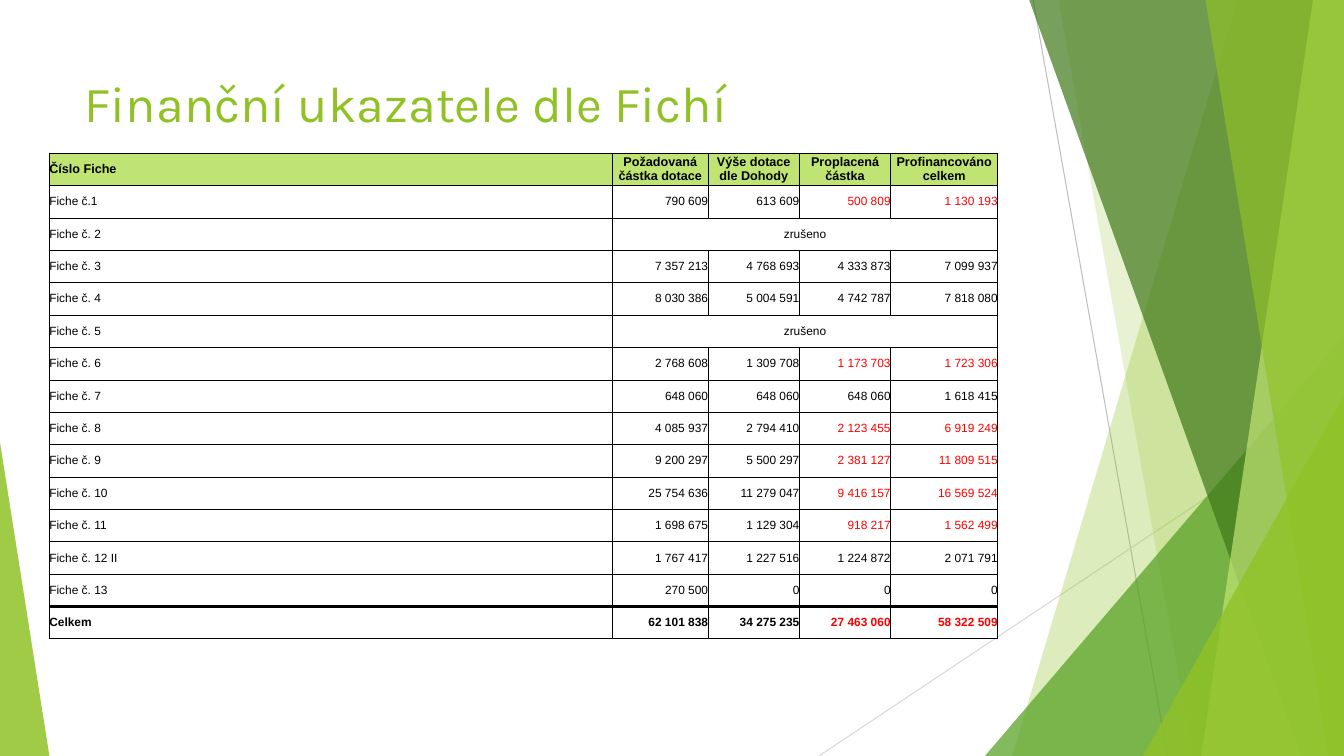
from dataclasses import dataclass

from lxml import etree
from pptx import Presentation
from pptx.dml.color import RGBColor
from pptx.enum import shapes, text
from pptx.oxml import ns
from pptx.util import Pt

W, H = 960, 540
LEFT, CENTER, RIGHT = text.PP_ALIGN.LEFT, text.PP_ALIGN.CENTER, text.PP_ALIGN.RIGHT


@dataclass(frozen=True)
class Theme:
    green: str = "90C226"
    leaf: str = "54A021"
    forest: str = "3F7819"
    lime: str = "C0E474"
    gray: str = "BFBFBF"
    pale_gray: str = "D9D9D9"
    black: str = "000000"
    red: str = "FF0000"
    white: str = "FFFFFF"
    title_font: str = "Karla"
    table_font: str = "Arial"
    title_size: float = 36
    head_size: float = 9
    body_size: float = 8.5
    thin: float = 0.5
    edge: float = 1
    heavy: float = 2


T = Theme()

COLUMNS = [402.2, 68.4, 65.2, 65.2, 76.5]
ROW_HEIGHT = 23.14
HEADINGS = ["Číslo Fiche", "Požadovaná částka dotace", "Výše dotace dle Dohody",
            "Proplacená částka", "Profinancováno celkem"]
CANCELLED = "zrušeno"
FICHES = [
    ["Fiche č.1", "790 609", "613 609", "500 809", "1 130 193"],
    ["Fiche č. 2", CANCELLED],
    ["Fiche č. 3", "7 357 213", "4 768 693", "4 333 873", "7 099 937"],
    ["Fiche č. 4", "8 030 386", "5 004 591", "4 742 787", "7 818 080"],
    ["Fiche č. 5", CANCELLED],
    ["Fiche č. 6", "2 768 608", "1 309 708", "1 173 703", "1 723 306"],
    ["Fiche č. 7", "648 060", "648 060", "648 060", "1 618 415"],
    ["Fiche č. 8", "4 085 937", "2 794 410", "2 123 455", "6 919 249"],
    ["Fiche č. 9", "9 200 297", "5 500 297", "2 381 127", "11 809 515"],
    ["Fiche č. 10", "25 754 636", "11 279 047", "9 416 157", "16 569 524"],
    ["Fiche č. 11", "1 698 675", "1 129 304", "918 217", "1 562 499"],
    ["Fiche č. 12 II", "1 767 417", "1 227 516", "1 224 872", "2 071 791"],
    ["Fiche č. 13", "270 500", "0", "0", "0"],
]
TOTALS = ["Celkem", "62 101 838", "34 275 235", "27 463 060", "58 322 509"]
RED_ROWS = {1, 6, 8, 9, 10, 11, 14}


def write(tf, words, *, font, size, color, bold=False, align=LEFT):
    p = tf.paragraphs[0]
    p.alignment = align
    r = p.add_run()
    r.text = words
    r.font.name, r.font.size, r.font.bold = font, Pt(size), bold
    r.font.color.rgb = RGBColor.from_string(color)


def paint(sp, color, opacity):
    """Fill a shape with a see-through colour and no outline."""
    sp.shadow.inherit = False
    sp.line.fill.background()
    sp.fill.solid()
    sp.fill.fore_color.rgb = RGBColor.from_string(color)
    clr = sp._element.spPr.find(".//" + ns.qn("a:srgbClr"))
    etree.SubElement(clr, ns.qn("a:alpha"), val=str(opacity * 1000))


def add_line(s, x1, y1, x2, y2, color):
    line = s.shapes.add_connector(shapes.MSO_CONNECTOR.STRAIGHT,
                                  Pt(x1), Pt(y1), Pt(x2), Pt(y2))
    line.line.color.rgb = RGBColor.from_string(color)
    line.line.width = Pt(0.75)
    etree.SubElement(line._element.spPr, ns.qn("a:effectLst"))


def add_blade(s, top, bottom, color, opacity):
    """Add a full-height band from a slanted left side to the slide's right edge."""
    builder = s.shapes.build_freeform(Pt(top), Pt(-0.6), scale=1.0)
    corners = [(W, -0.6), (W, H), (bottom, H)]
    builder.add_line_segments([(Pt(x), Pt(y)) for x, y in corners], close=True)
    paint(builder.convert_to_shape(), color, opacity)


def add_corner(s, left, top, width, apex, color, opacity):
    """Add a triangle standing on the slide's bottom edge."""
    sp = s.shapes.add_shape(shapes.MSO_SHAPE.ISOSCELES_TRIANGLE,
                            Pt(left), Pt(top), Pt(width), Pt(H - top))
    sp.adjustments[0] = apex
    paint(sp, color, opacity)


def add_background(s):
    add_line(s, 738, 0, 834, H, T.gray)
    add_line(s, W, 290, 585, H, T.pale_gray)
    add_blade(s, 884, 723, T.green, 30)
    add_blade(s, 756, 852, T.green, 20)
    add_corner(s, 703.5, 240, 256.5, 1, T.leaf, 72)
    add_blade(s, 735, 929.5, T.forest, 70)
    add_blade(s, 938, 858, T.lime, 70)
    add_blade(s, 861, 949, T.green, 65)
    add_corner(s, 816.5, 283, 143.5, 1, T.green, 80)
    add_corner(s, 0, 316, 35.3, 0, T.green, 85)


def add_title(s, words):
    tf = s.shapes.add_textbox(Pt(53.3), Pt(48), Pt(677), Pt(104)).text_frame
    tf.word_wrap = True
    write(tf, words, font=T.title_font, size=T.title_size, color=T.green)


def set_borders(cell, **widths):
    tc_pr = cell._tc.get_or_add_tcPr()
    for side in "LRTB":
        ln = etree.SubElement(tc_pr, ns.qn("a:ln" + side), w=str(Pt(widths[side])))
        fill = etree.SubElement(ln, ns.qn("a:solidFill"))
        etree.SubElement(fill, ns.qn("a:srgbClr"), val=T.black)


def format_cell(cell, row, col, last_row, last_col):
    cell.margin_left = cell.margin_right = cell.margin_top = cell.margin_bottom = 0
    cell.vertical_anchor = text.MSO_ANCHOR.MIDDLE
    reaches_right = col == last_col or cell.is_merge_origin
    set_borders(cell,
                L=T.edge if col == 0 else T.thin,
                R=T.edge if reaches_right else T.thin,
                T={0: T.edge, last_row: T.heavy}.get(row, T.thin),
                B={last_row - 1: T.heavy, last_row: T.edge}.get(row, T.thin))
    if row == 0 or (row, col) == (last_row, last_col):
        cell.fill.solid()
        cell.fill.fore_color.rgb = RGBColor.from_string(T.white if row else T.lime)
    else:
        cell.fill.background()


def add_finance_table(s):
    rows = [HEADINGS, *FICHES, TOTALS]
    last_row, last_col = len(rows) - 1, len(COLUMNS) - 1
    table = s.shapes.add_table(len(rows), len(COLUMNS), Pt(35.2), Pt(109.4),
                               Pt(sum(COLUMNS)), Pt(ROW_HEIGHT * len(rows))).table
    table.first_row = table.horz_banding = False
    for column, width in zip(table.columns, COLUMNS):
        column.width = Pt(width)
    for i, values in enumerate(rows):
        table.rows[i].height = Pt(ROW_HEIGHT)
        if CANCELLED in values:
            table.cell(i, 1).merge(table.cell(i, last_col))
        for j in range(len(COLUMNS)):
            format_cell(table.cell(i, j), i, j, last_row, last_col)
        for j, value in enumerate(values):
            centred = i == 0 or value == CANCELLED
            write(table.cell(i, j).text_frame, value, font=T.table_font,
                  size=T.body_size if i else T.head_size,
                  color=T.red if i in RED_ROWS and j >= 3 else T.black,
                  bold=i in (0, last_row),
                  align=LEFT if j == 0 else CENTER if centred else RIGHT)


def main():
    prs = Presentation()
    prs.slide_width, prs.slide_height = Pt(W), Pt(H)
    s = prs.slides.add_slide(prs.slide_layouts[6])
    add_background(s)
    add_title(s, "Finanční ukazatele dle Fichí")
    add_finance_table(s)
    prs.save("out.pptx")


if __name__ == "__main__":
    main()
